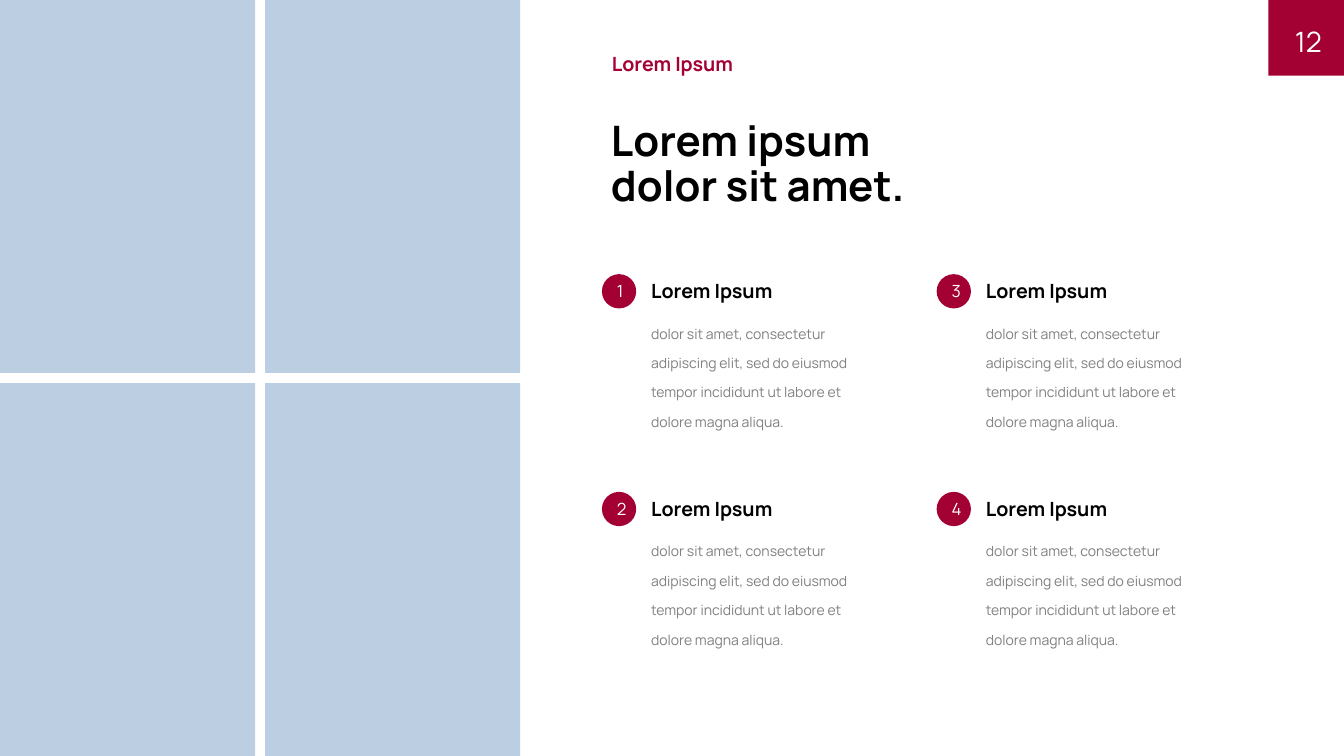
from dataclasses import dataclass
from itertools import product

from pptx import Presentation
from pptx.dml.color import RGBColor
from pptx.enum.shapes import MSO_SHAPE as SHAPE
from pptx.enum.text import MSO_ANCHOR as ANCHOR, MSO_AUTO_SIZE as AUTO, PP_ALIGN as ALIGN
from pptx.util import Inches, Pt

FONT = "Manrope"
CRIMSON, BLUE, BLACK, GREY, WHITE = "A30134", "BBCEE2", "000000", "808080", "FFFFFF"
BODY = ("dolor sit amet, consectetur adipiscing elit, sed do eiusmod "
        "tempor incididunt ut labore et dolore magna aliqua.")


@dataclass
class Item:
    number: str
    heading: str
    body: str
    x: float
    y: float


def rgb(color: str) -> RGBColor:
    return RGBColor.from_string(color)


def write(tf, text: str, *, size: float, color: str, bold: bool = False,
          align=ALIGN.LEFT, anchor=ANCHOR.TOP, spacing: float = 1.0) -> None:
    tf.word_wrap = True
    tf.auto_size = AUTO.NONE
    tf.vertical_anchor = anchor
    for i, line in enumerate(text.split("\n")):
        p = tf.add_paragraph() if i else tf.paragraphs[0]
        p.alignment, p.line_spacing = align, spacing
        r = p.add_run()
        r.text = line
        r.font.name, r.font.size, r.font.bold = FONT, Pt(size), bold
        r.font.color.rgb = rgb(color)


def add_text(s, x: float, y: float, w: float, h: float, text: str, **fmt):
    box = s.shapes.add_textbox(Inches(x), Inches(y), Inches(w), Inches(h))
    write(box.text_frame, text, **fmt)
    return box


def add_shape(s, kind, x: float, y: float, w: float, h: float, color: str):
    sp = s.shapes.add_shape(kind, Inches(x), Inches(y), Inches(w), Inches(h))
    sp.shadow.inherit = False
    sp.fill.solid()
    sp.fill.fore_color.rgb = rgb(color)
    sp.line.fill.background()
    return sp


def add_item(s, item: Item) -> None:
    text_x = item.x + 0.39
    add_text(s, text_x, item.y + 0.33, 2.36, 1.25, item.body,
             size=10, color=GREY, spacing=1.75)
    add_text(s, text_x, item.y, 2.36, 0.34, item.heading,
             size=14, color=BLACK, bold=True)
    badge = add_shape(s, SHAPE.OVAL, item.x, item.y, 0.34, 0.34, CRIMSON)
    write(badge.text_frame, item.number, size=12, color=WHITE,
          align=ALIGN.CENTER, anchor=ANCHOR.MIDDLE)


def main() -> None:
    prs = Presentation()
    prs.slide_width, prs.slide_height = Inches(13.33), Inches(7.5)
    s = prs.slides.add_slide(prs.slide_layouts[5])

    # Blue panels
    for x, y in product((0, 2.63), (0, 3.8)):
        add_shape(s, SHAPE.RECTANGLE, x, y, 2.53, 3.7, BLUE)

    # Page number
    add_shape(s, SHAPE.RECTANGLE, 12.58, 0, 0.75, 0.75, CRIMSON)
    page = add_text(s, 12.56, 0.06, 0.55, 0.69, "12", size=20, color=WHITE,
                    align=ALIGN.RIGHT, anchor=ANCHOR.MIDDLE)
    tf = page.text_frame
    tf.margin_left = tf.margin_right = tf.margin_top = tf.margin_bottom = 0

    # Kicker and title
    add_text(s, 5.97, 0.47, 3.75, 0.34, "Lorem Ipsum", size=14, color=CRIMSON, bold=True)
    title = s.shapes.title
    title.left, title.top = Inches(5.96), Inches(1.14)
    title.width, title.height = Inches(6.22), Inches(1.02)
    write(title.text_frame, "Lorem ipsum\ndolor sit amet.", size=30, color=BLACK,
          bold=True, spacing=0.9)

    # Numbered items, down each column in turn
    for n, (x, y) in enumerate(product((5.97, 9.29), (2.72, 4.88)), start=1):
        add_item(s, Item(str(n), "Lorem Ipsum", BODY, x, y))

    prs.save("out.pptx")


if __name__ == "__main__":
    main()
